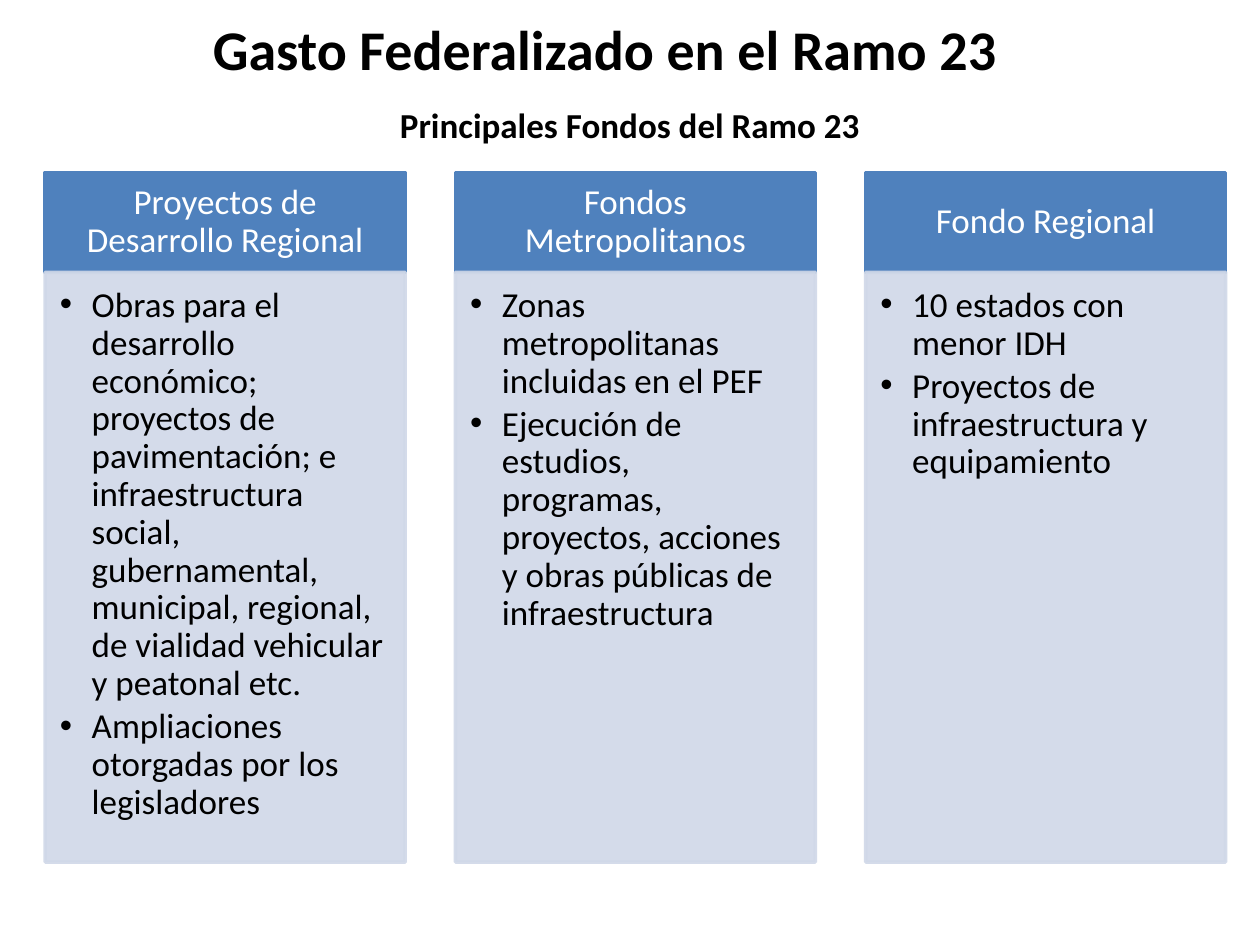
"""Build the slide on the main funds of federalized spending in Ramo 23."""
from lxml.etree import SubElement
from pptx import Presentation
from pptx.dml.color import RGBColor
from pptx.enum.shapes import MSO_SHAPE
from pptx.enum.text import MSO_ANCHOR as Anchor, PP_ALIGN as Align
from pptx.oxml.ns import qn
from pptx.util import Cm, Pt

BLACK = RGBColor(0x00, 0x00, 0x00)
WHITE = RGBColor(0xFF, 0xFF, 0xFF)
BLUE = RGBColor(0x4F, 0x81, 0xBD)
PALE_BLUE = RGBColor(0xD0, 0xD8, 0xE8)

FUNDS = [
    ("Proyectos de Desarrollo Regional", [
        "Obras para el desarrollo económico; proyectos de pavimentación; "
        "e infraestructura social, gubernamental, municipal, regional, "
        "de vialidad vehicular y peatonal etc.",
        "Ampliaciones otorgadas por los legisladores"]),
    ("Fondos Metropolitanos", [
        "Zonas metropolitanas incluidas en el PEF",
        "Ejecución de estudios, programas, proyectos, acciones y obras "
        "públicas de infraestructura"]),
    ("Fondo Regional", [
        "10 estados con menor IDH",
        "Proyectos de infraestructura y equipamiento"]),
]
HEADINGS = [
    ("Principales Fondos del Ramo 23", 20, (0, 1.9, 25.4, 1.2)),
    ("Gasto Federalizado en el Ramo 23", 32, (0.5, 0, 23.4, 1.93)),
]
LEFT, PITCH, WIDTH = 0.91, 8.27, 7.26
HEADER_TOP, HEADER_HEIGHT, BODY_HEIGHT = 3.48, 2.01, 11.89


def style(paragraph, size, color, bold=False):
    paragraph.font.name = "Calibri"
    paragraph.font.size = Pt(size)
    paragraph.font.bold = bold
    paragraph.font.color.rgb = color


def add_panel(left, top, height, color, insets, anchor):
    panel = slide.shapes.add_shape(
        MSO_SHAPE.RECTANGLE, Cm(left), Cm(top), Cm(WIDTH), Cm(height))
    panel.shadow.inherit = False
    panel.fill.solid()
    panel.fill.fore_color.rgb = color
    panel.line.color.rgb = color
    panel.line.width = Pt(2)
    frame = panel.text_frame
    frame.word_wrap = True
    frame.vertical_anchor = anchor
    (frame.margin_left, frame.margin_top,
     frame.margin_right, frame.margin_bottom) = map(Cm, insets)
    return panel


prs = Presentation()
prs.slide_width, prs.slide_height = Cm(25.4), Cm(19.05)
slide = prs.slides.add_slide(prs.slide_layouts[6])

for text, size, box in HEADINGS:
    frame = slide.shapes.add_textbox(*map(Cm, box)).text_frame
    frame.word_wrap = True
    frame.vertical_anchor = Anchor.MIDDLE
    heading = frame.paragraphs[0]
    heading.text = text
    heading.alignment = Align.CENTER
    style(heading, size, BLACK, bold=True)

for column, (fund, details) in enumerate(FUNDS):
    left = LEFT + column * PITCH
    header = add_panel(left, HEADER_TOP, HEADER_HEIGHT, BLUE,
                       (0.41, 0.23, 0.41, 0.23), Anchor.MIDDLE)
    name = header.text_frame.paragraphs[0]
    name.text = fund
    name.alignment = Align.CENTER
    name.line_spacing = 0.9
    style(name, 20, WHITE)

    body = add_panel(left, HEADER_TOP + HEADER_HEIGHT, BODY_HEIGHT, PALE_BLUE,
                     (0.3, 0.3, 0.41, 0.43), Anchor.TOP)
    for tint in body._element.spPr.iter(qn("a:srgbClr")):
        SubElement(tint, qn("a:alpha"), val="90000")
    for index, detail in enumerate(details):
        frame = body.text_frame
        item = frame.add_paragraph() if index else frame.paragraphs[0]
        item.text = detail
        item.alignment = Align.LEFT
        item.line_spacing = 0.9
        item.space_after = Pt(3)
        props = item._p.get_or_add_pPr()
        props.set("marL", str(Cm(0.64)))
        props.set("indent", str(-Cm(0.64)))
        SubElement(props, qn("a:buFont"), typeface="Arial")
        SubElement(props, qn("a:buChar"), char="•")
        style(item, 20, BLACK)

prs.save("out.pptx")
